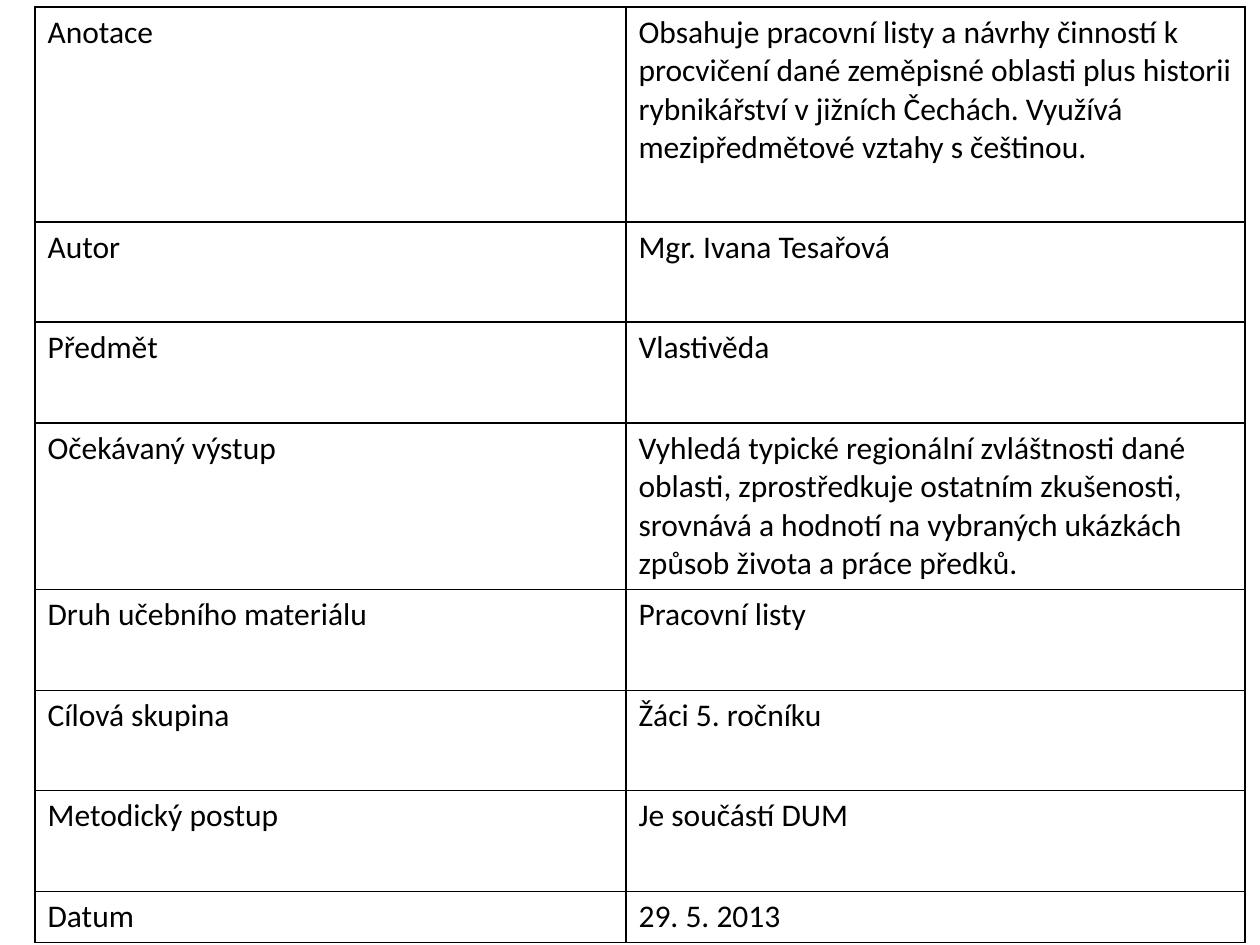
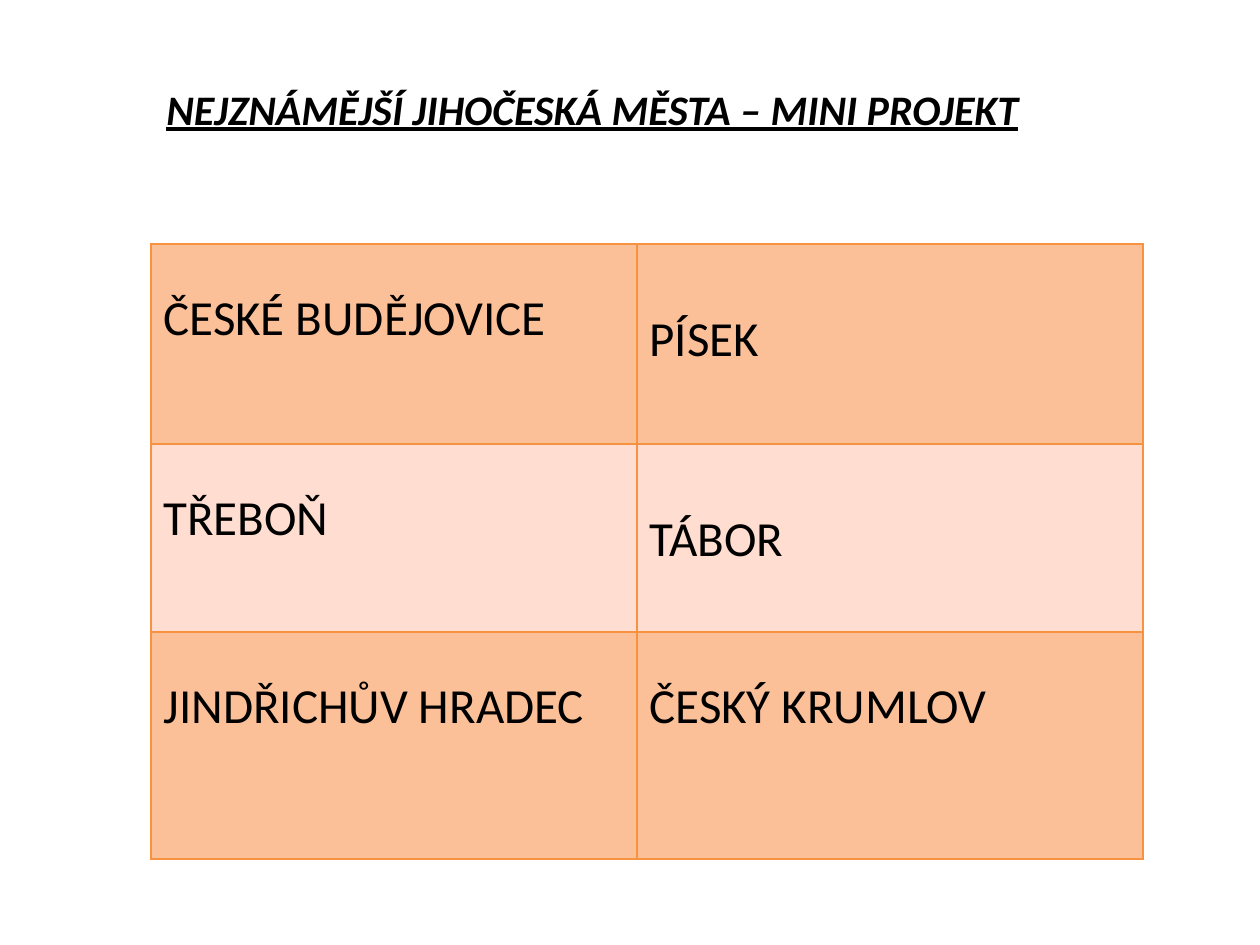
from lxml.etree import SubElement
from pptx import Presentation
from pptx.dml.color import RGBColor as RGB
from pptx.oxml.ns import qn
from pptx.util import Emu, Pt

FONT = "Calibri"
COLOURS = {"ink": "000000", "frame": "F69240", "peach": "FCC099", "blush": "FFDDD0"}
PX_PER_INCH = 126


def px(length):
    return Emu(round(length * 914400 / PX_PER_INCH))


def style_runs(text_frame, size, emphasis=False):
    for paragraph in text_frame.paragraphs:
        for run in paragraph.runs:
            font = run.font
            font.name, font.size = FONT, Pt(size)
            font.color.rgb = RGB.from_string(COLOURS["ink"])
            font.bold = font.italic = font.underline = emphasis


def set_borders(cell, colour, width):
    """Draw all four sides; they must come before the fill."""
    properties = cell._tc.get_or_add_tcPr()
    for position, side in enumerate(("lnL", "lnR", "lnT", "lnB")):
        line = SubElement(properties, qn(f"a:{side}"), w=str(Pt(width)))
        solid = SubElement(line, qn("a:solidFill"))
        SubElement(solid, qn("a:srgbClr"), val=COLOURS[colour])
        properties.insert(position, line)


def add_grid(slide, left, top, widths, heights, rows, size, border, fills=None, drops=None):
    """Place a table; fills go by row, drops are text offsets by cell."""
    grid = slide.shapes.add_table(len(rows), len(widths), px(left), px(top),
                                  px(sum(widths)), px(sum(heights))).table
    grid.first_row = grid.horz_banding = False
    for column, width in zip(grid.columns, widths):
        column.width = px(width)
    for r, (labels, height) in enumerate(zip(rows, heights)):
        grid.rows[r].height = px(height)
        for c, label in enumerate(labels):
            cell = grid.cell(r, c)
            cell.text_frame.text = label
            style_runs(cell.text_frame, size)
            if drops:
                cell.margin_top = px(drops[r][c])
            if fills:
                cell.fill.solid()
                cell.fill.fore_color.rgb = RGB.from_string(COLOURS[fills[r]])
            else:
                cell.fill.background()
            set_borders(cell, *border)


def add_heading(slide, left, top, width, height, wording):
    heading = slide.shapes.add_textbox(px(left), px(top), px(width), px(height)).text_frame
    heading.word_wrap = True
    heading.text = wording
    style_runs(heading, 24, emphasis=True)


def build_annotation(slide):
    details = [
        ("Anotace", "Obsahuje pracovní listy a návrhy činností k procvičení dané "
                    "zeměpisné oblasti plus historii rybnikářství v jižních Čechách. "
                    "Využívá mezipředmětové vztahy s češtinou."),
        ("Autor", "Mgr. Ivana Tesařová"),
        ("Předmět", "Vlastivěda"),
        ("Očekávaný výstup", "Vyhledá typické regionální zvláštnosti dané oblasti, "
                             "zprostředkuje ostatním zkušenosti, srovnává a hodnotí na "
                             "vybraných ukázkách způsob života a práce předků."),
        ("Druh učebního materiálu", "Pracovní listy"),
        ("Cílová skupina", "Žáci 5. ročníku"),
        ("Metodický postup", "Je součástí DUM"),
        ("Datum", "29. 5. 2013"),
    ]
    heights = [215, 100, 101, 166, 101, 100, 101, 50]
    add_grid(slide, 35, 7, [591, 619], heights, details, 18, ("ink", 1))


def build_towns(slide):
    towns = [
        ("ČESKÉ BUDĚJOVICE", "PÍSEK"),
        ("TŘEBOŇ", "TÁBOR"),
        ("JINDŘICHŮV HRADEC", "ČESKÝ KRUMLOV"),
    ]
    high, low = 45, 66
    add_grid(slide, 151, 244, [486, 506], [200, 188, 227], towns, 28, ("frame", 0.75),
             fills=["peach", "blush", "peach"],
             drops=[(high, low), (high, low), (high, high)])
    add_heading(slide, 154, 77, 953, 63, "NEJZNÁMĚJŠÍ JIHOČESKÁ MĚSTA – MINI PROJEKT")


def main():
    deck = Presentation()
    deck.slide_width, deck.slide_height = px(1260), px(945)
    for build in (build_annotation, build_towns):
        build(deck.slides.add_slide(deck.slide_layouts[6]))
    deck.save("out.pptx")


if __name__ == "__main__":
    main()
